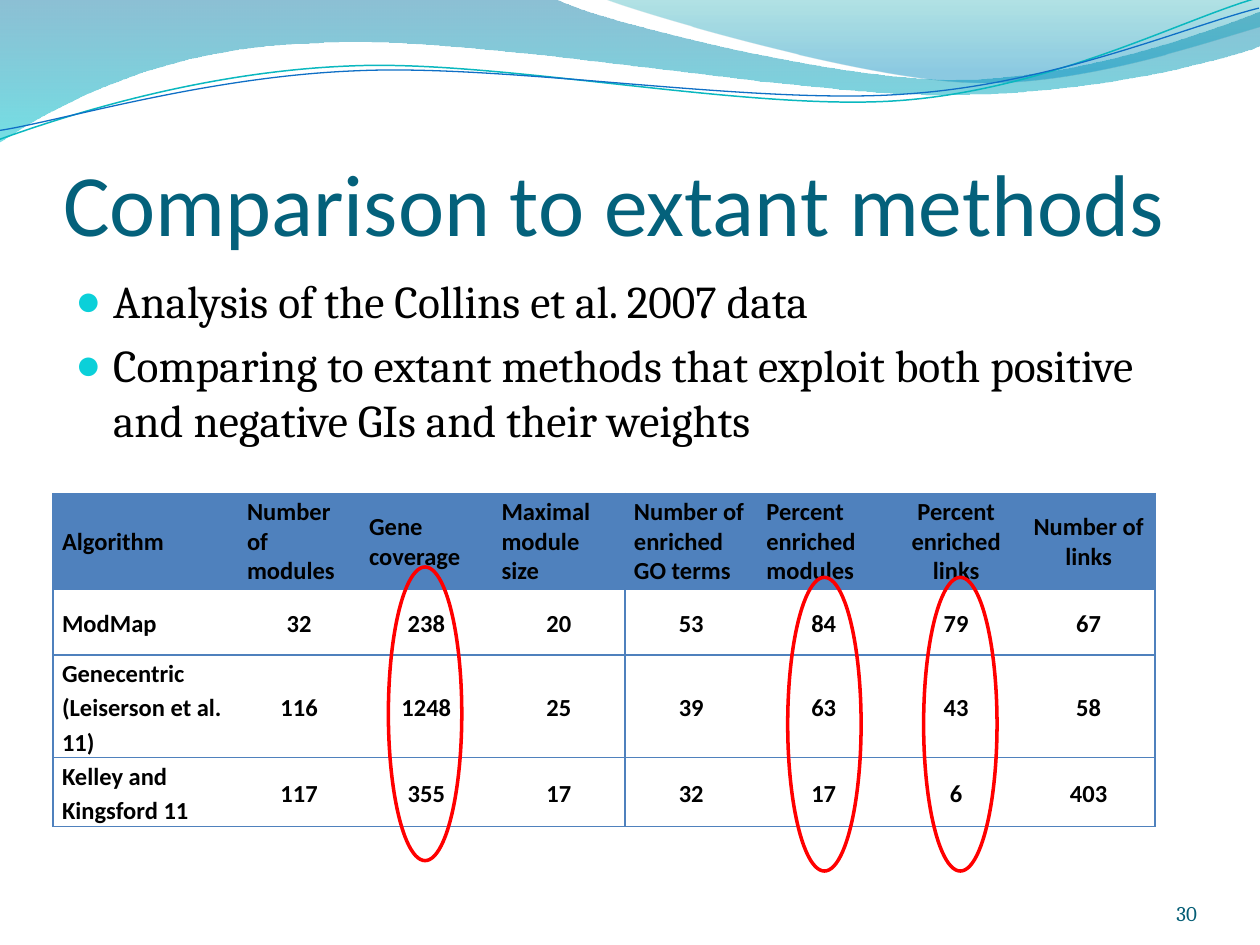
from lxml import etree
from pptx import Presentation
from pptx import util as u
from pptx.dml.color import RGBColor
from pptx.enum import shapes, text
from pptx.oxml import ns

TEAL = RGBColor(0x04, 0x61, 0x7B)
DEEP = RGBColor(0x04, 0x5D, 0x75)
BLACK = RGBColor(0, 0, 0)
BLUE = RGBColor(0x4F, 0x81, 0xBD)
RED = RGBColor(0xFF, 0, 0)
AQUA = RGBColor(0x0A, 0xB8, 0xBF)
AZURE = RGBColor(0x0F, 0x6F, 0xC6)
CYAN = RGBColor(0x0B, 0xD0, 0xD9)
INCH = u.Cm(2.54)
LEFT, MID, RIGHT = text.PP_ALIGN.LEFT, text.PP_ALIGN.CENTER, text.PP_ALIGN.RIGHT
LOW, HALF = text.MSO_ANCHOR.BOTTOM, text.MSO_ANCHOR.MIDDLE


def style(para, size, name, color, bold=False):
    font = para.font
    look = {"size": u.Pt(size), "name": name, "bold": bold}
    for key, val in look.items():
        setattr(font, key, val)
    font.color.rgb = color


def draw(tree, parts, close):
    """Outline in inches: pairs are corners, sixes are cubic curves."""
    dots = [(round(p[k] * INCH), round(p[k + 1] * INCH))
            for p in parts for k in range(0, len(p), 2)]
    pen = tree.build_freeform(*dots[0])
    pen.add_line_segments(dots[1:], close=close)
    form = pen.convert_to_shape()
    form.shadow.inherit = False
    # Merge each curve's three steps into one cubic
    steps = iter(list(form.element.iter(ns.qn("a:lnTo"))))
    for part in parts[1:]:
        first = next(steps)
        if len(part) == 6:
            first.tag = ns.qn("a:cubicBezTo")
            for _ in range(2):
                step = next(steps)
                first.append(step[0])
                step.getparent().remove(step)
    return form


prs = Presentation()
prs.slide_width, prs.slide_height = u.Cm(25.4), u.Cm(19.05)
slide = prs.slides.add_slide(prs.slide_layouts[1])
tree = slide.shapes

# Shaded waves: outline, then colour, opacity and place of each stop
waves = [
    ([(-0.01, -0.01), (4.4, -0.01), (4.76, 0.17, 6.64, 0.63, 7.58, 0.63),
      (8.53, 0.63, 9.58, 0.26, 10, 0.09), (10.01, 0.36),
      (9.83, 0.44, 8.7, 0.76, 7.46, 0.75), (6.22, 0.75, 3.82, 0.28, 2.57, 0.34),
      (1.29, 0.36, 0.46, 0.83, -0.01, 1.13)],
     [("0074A1", 45, 0), ("00C6CF", 55, 1)]),
    ([(4.79, -0.01), (5.09, 0.11, 6.82, 0.62, 7.69, 0.65),
      (8.56, 0.69, 9.61, 0.32, 10, 0.21), (10, 0)],
     [("00A1A9", 30, 0), ("008BBF", 45, 0.8)]),
]
back = []
for parts, stops in waves:
    wave = draw(tree, parts, True)
    wave.line.fill.background()
    wave.fill.gradient()
    wave.fill.gradient_angle = 270
    for stop, (tone, _, spot) in zip(wave.fill.gradient_stops, stops):
        stop.color.rgb = RGBColor.from_string(tone)
        stop.position = spot
    for node, (_, clear, _) in zip(wave.element.iter(ns.qn("a:srgbClr")), stops):
        etree.SubElement(node, ns.qn("a:alpha"), val=str(clear * 1000))
    back.append(wave)

# Thin wave lines, slightly turned
strands = [
    ([(-0.02, 0.87), (0.47, 0.72, 1.58, 0.41, 2.78, 0.42),
      (3.96, 0.42, 5.91, 0.93, 7.12, 0.9), (8.32, 0.87, 9.4, 0.36, 10, 0.22)], AQUA, 0.85),
    ([(-0.02, 0.8), (0.46, 0.75, 1.64, 0.45, 2.83, 0.46),
      (4.03, 0.46, 5.96, 0.88, 7.16, 0.85), (8.35, 0.83, 9.42, 0.42, 10.01, 0.3)], AZURE, 0.75),
]
for parts, color, width in strands:
    strand = draw(tree, parts, False)
    strand.rotation = 357.3
    strand.fill.background()
    strand.line.color.rgb = color
    strand.line.width = u.Pt(width)
    back.append(strand)

# Waves go behind the text
for spot, form in enumerate(back, 2):
    tree.element.insert(spot, form.element)

# Title, list and page number
title, body = tree.title, slide.placeholders[1]
page = tree.add_textbox(0, 0, 0, 0)
boxes = [
    (title, (1.27, 1.95, 22.86, 3.18), (0, 0.13, 0, 0), LOW, LEFT,
     ["Comparison to extant methods"], (50, "Calibri", TEAL)),
    (body, (1.27, 5.38, 22.86, 12.19), (0.25, 0.13, 0.25, 0.13), text.MSO_ANCHOR.TOP, LEFT,
     ["Analysis of the Collins et al. 2007 data",
      "Comparing to extant methods that exploit both positive and negative GIs and their weights"],
     (26, "Cambria", BLACK)),
    (page, (22.02, 17.65, 2.11, 1.02), (0, 0, 0, 0), LOW, RIGHT,
     ["30"], (12, "Cambria", DEEP)),
]
for box, place, pads, anchor, align, lines, look in boxes:
    for key, val in zip(("left", "top", "width", "height"), place):
        setattr(box, key, u.Cm(val))
    frame = box.text_frame
    for key, val in zip(("left", "top", "right", "bottom"), pads):
        setattr(frame, "margin_" + key, u.Cm(val))
    frame.word_wrap = True
    frame.auto_size = text.MSO_AUTO_SIZE.NONE
    frame.vertical_anchor = anchor
    frame.text = "\n".join(lines)
    for row, para in enumerate(frame.paragraphs):
        para.alignment = align
        para.space_before = u.Pt(5.2 if row else 0)
        if box is body:
            props = para._p.get_or_add_pPr()
            props.set("marL", str(u.Cm(0.76)))
            props.set("indent", str(u.Cm(-0.76)))
            tint = etree.SubElement(props, ns.qn("a:buClr"))
            etree.SubElement(tint, ns.qn("a:srgbClr"), val=str(CYAN))
            etree.SubElement(props, ns.qn("a:buSzPct"), val="95000")
            etree.SubElement(props, ns.qn("a:buChar"), char="●")
        style(para, *look)

# Results table
data = [
    ["Algorithm", "Number of modules", "Gene coverage", "Maximal module size",
     "Number of enriched GO terms", "Percent enriched modules",
     "Percent enriched links", "Number of links"],
    ["ModMap", "32", "238", "20", "53", "84", "79", "67"],
    ["Genecentric (Leiserson et al. 11)", "116", "1248", "25", "39", "63", "43", "58"],
    ["Kelley and Kingsford 11", "117", "355", "17", "32", "17", "6", "403"],
]
wide = [3.73, 2.46] + [2.67] * 6
high = [1.94, 1.31, 2.07, 1.38]
grid = tree.add_table(len(high), len(wide), u.Cm(1.07), u.Cm(9.95),
                      u.Cm(sum(wide)), u.Cm(sum(high))).table
# Plain style without grid
grid._tbl.tblPr.find(ns.qn("a:tableStyleId")).text = "{2D5ABB26-0587-4C30-8999-92F81FD0307C}"
for col, size in zip(grid.columns, wide):
    col.width = u.Cm(size)
for row, size in zip(grid.rows, high):
    row.height = u.Cm(size)
for r, words in enumerate(data):
    for c, word in enumerate(words):
        cell = grid.cell(r, c)
        cell.text = word
        look = {"vertical_anchor": HALF, "margin_left": u.Cm(0.18), "margin_right": u.Cm(0.18),
                "margin_top": 0, "margin_bottom": 0}
        for key, val in look.items():
            setattr(cell, key, val)
        # Rules between rows, round the edge and down the middle
        rules = {"L": c in (0, 4), "R": c in (3, 7), "T": r == 0, "B": r > 0}
        for side, shown in rules.items():
            if side in "TB" and not shown:
                continue
            edge = etree.SubElement(cell._tc.get_or_add_tcPr(), ns.qn("a:ln" + side),
                                    w=str(u.Pt(1)))
            ink = etree.SubElement(edge, ns.qn("a:solidFill" if shown else "a:noFill"))
            if shown:
                etree.SubElement(ink, ns.qn("a:srgbClr"), val=str(BLUE))
        if r == 0:
            cell.fill.solid()
            cell.fill.fore_color.rgb = BLUE
        else:
            cell.fill.background()
        para = cell.text_frame.paragraphs[0]
        para.alignment = MID if c > 5 or (r and c) else LEFT
        para.line_spacing = 1.15 if r else 1.0
        style(para, 14, "Calibri", BLACK, True)

# Red rings round the key columns
for left, top in ((7.83, 11.43), (15.88, 11.64), (18.62, 11.64)):
    ring = tree.add_shape(shapes.MSO_SHAPE.OVAL, u.Cm(left), u.Cm(top), u.Cm(1.48), u.Cm(5.92))
    ring.shadow.inherit = False
    ring.fill.background()
    ring.line.color.rgb = RED
    ring.line.width = u.Pt(2)

prs.save("out.pptx")
